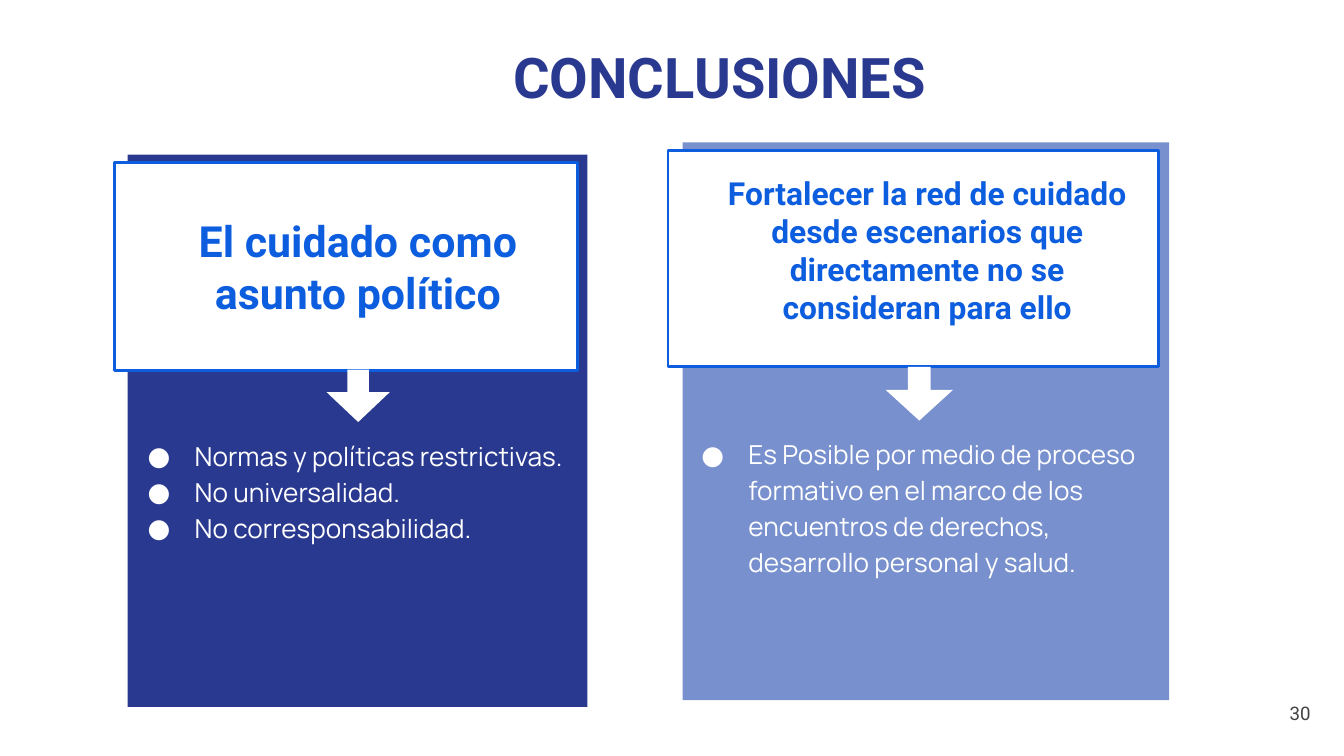
from lxml import etree
from pptx import Presentation
from pptx.dml.color import RGBColor
from pptx.enum.shapes import MSO_SHAPE
from pptx.enum.text import MSO_ANCHOR, PP_ALIGN
from pptx.oxml.ns import qn
from pptx.util import Inches, Pt

RECTANGLE, ARROW = MSO_SHAPE.RECTANGLE, MSO_SHAPE.RIGHT_ARROW
TOP, MIDDLE = MSO_ANCHOR.TOP, MSO_ANCHOR.MIDDLE
LEFT, CENTER, RIGHT = PP_ALIGN.LEFT, PP_ALIGN.CENTER, PP_ALIGN.RIGHT

WHITE = RGBColor(0xFF, 0xFF, 0xFF)
NAVY = RGBColor(0x2A, 0x39, 0x90)
PERIWINKLE = RGBColor(0x78, 0x90, 0xCD)
BLUE = RGBColor(0x0D, 0x5D, 0xDF)
GRAY = RGBColor(0x43, 0x43, 0x43)

TITLE_FORMAT = {"name": "Roboto", "size": Pt(30), "bold": True}
NUMBER_FORMAT = {"name": "Roboto", "size": Pt(10)}
BODY_FORMAT = {"name": "Manrope", "size": Pt(14)}

COLUMNS = [
    {
        "color": NAVY,
        "panel": (0.95, 1.15, 3.42, 4.11),
        "card": (0.85, 1.21, 3.45, 1.55),
        "heading_box": (1.14, 1.02, 3.05, 1.92),
        "heading": "El cuidado como asunto político",
        "heading_size": 23,
        "arrow": (2.47, 2.71, 0.39, 0.47),
        "list_box": (0.85, 3.14, 3.61, 2.06),
        "items": [
            "Normas y políticas restrictivas.",
            "No universalidad.",
            "No corresponsabilidad.",
        ],
    },
    {
        "color": PERIWINKLE,
        "panel": (5.08, 1.06, 3.62, 4.15),
        "card": (4.97, 1.12, 3.65, 1.61),
        "heading_box": (5.18, 1.12, 3.44, 1.48),
        "heading": "Fortalecer la red de cuidado desde escenarios que "
                   "directamente no se consideran para ello",
        "heading_size": 17,
        "arrow": (6.64, 2.68, 0.4, 0.5),
        "list_box": (4.97, 3.13, 3.82, 1.97),
        "items": [
            "Es Posible por medio de proceso formativo en el marco de los "
            "encuentros de derechos, desarrollo personal y salud.",
        ],
    },
]


def to_inches(box):
    return [Inches(length) for length in box]


def add_filled_shape(shapes, kind, box, color, line_color=None):
    shape = shapes.add_shape(kind, *to_inches(box))
    shape.shadow.inherit = False
    shape.fill.solid()
    shape.fill.fore_color.rgb = color
    if line_color is None:
        shape.line.fill.background()
    else:
        shape.line.color.rgb = line_color
        shape.line.width = Pt(1.5)
    return shape


def add_down_arrow(shapes, box):
    arrow = add_filled_shape(shapes, ARROW, box, WHITE)
    arrow.rotation = 90
    arrow.adjustments[0] = 0.34
    arrow.adjustments[1] = 0.57


def add_text(shapes, box, lines, text_format, color, alignment=LEFT,
             anchor=MIDDLE, bottom=0.1):
    text_frame = shapes.add_textbox(*to_inches(box)).text_frame
    frame_format = {
        "word_wrap": True,
        "vertical_anchor": anchor,
        "margin_left": Inches(0.1),
        "margin_right": Inches(0.1),
        "margin_top": Inches(0.1),
        "margin_bottom": Inches(bottom),
    }
    for name, value in frame_format.items():
        setattr(text_frame, name, value)
    text_frame.text = "\n".join(lines)
    for paragraph in text_frame.paragraphs:
        paragraph.alignment = alignment
        font = paragraph.runs[0].font
        font.color.rgb = color
        for name, value in text_format.items():
            setattr(font, name, value)
    return text_frame


def add_bullet(paragraph):
    paragraph.line_spacing = 1.15
    properties = paragraph._p.get_or_add_pPr()
    properties.set("marL", str(Inches(0.5)))
    properties.set("indent", str(Inches(-0.35)))
    bullet_color = etree.SubElement(properties, qn("a:buClr"))
    etree.SubElement(bullet_color, qn("a:srgbClr"), val=str(WHITE))
    etree.SubElement(properties, qn("a:buSzPts"), val="1400")
    etree.SubElement(properties, qn("a:buFont"), typeface="Manrope")
    etree.SubElement(properties, qn("a:buChar"), char="●")


def add_bullet_list(shapes, box, items):
    text_frame = add_text(shapes, box, items, BODY_FORMAT, WHITE, anchor=TOP)
    for paragraph in text_frame.paragraphs:
        add_bullet(paragraph)


def add_column(slide, column):
    shapes = slide.shapes.add_group_shape().shapes
    add_filled_shape(shapes, RECTANGLE, column["panel"], column["color"])
    add_filled_shape(shapes, RECTANGLE, column["card"], WHITE, BLUE)
    heading_format = {**TITLE_FORMAT, "size": Pt(column["heading_size"])}
    add_text(shapes, column["heading_box"], [column["heading"]],
             heading_format, BLUE, CENTER)
    add_down_arrow(shapes, column["arrow"])
    add_bullet_list(shapes, column["list_box"], column["items"])


def main():
    presentation = Presentation()
    presentation.slide_width = Inches(10)
    presentation.slide_height = Inches(10) * 9 // 16
    slide = presentation.slides.add_slide(presentation.slide_layouts[6])
    add_text(slide.shapes, (9.25, 5.09, 0.6, 0.43), ["30"],
             NUMBER_FORMAT, GRAY, RIGHT)
    for column in COLUMNS:
        add_column(slide, column)
    add_text(slide.shapes, (2.83, 0.21, 5.05, 1.21), ["CONCLUSIONES"],
             TITLE_FORMAT, NAVY, CENTER, bottom=0.59)
    presentation.save("out.pptx")


if __name__ == "__main__":
    main()
